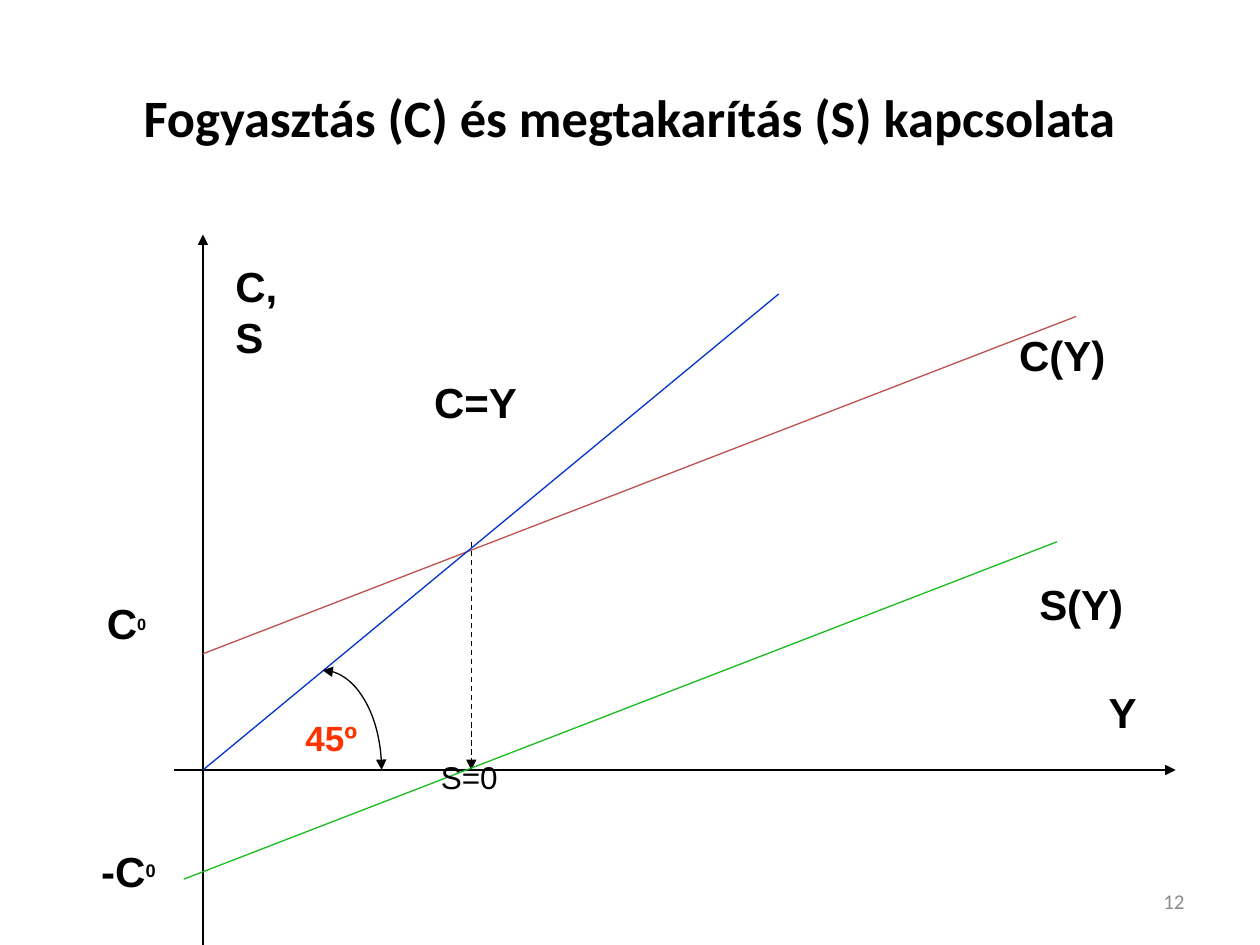
import math
from dataclasses import dataclass
from typing import Any

from lxml import etree
from pptx import Presentation
from pptx.dml.color import RGBColor
from pptx.enum import dml, shapes, text
from pptx.oxml import ns
from pptx.util import Pt


@dataclass(frozen=True)
class Theme:
    ink: str = "000000"
    muted: str = "8C8C8C"
    consumption: str = "C0504D"
    identity: str = "0033CC"
    saving: str = "15BD1D"
    angle: str = "FF3300"
    heading_font: str = "Calibri"
    label_font: str = "Arial"
    title: float = 30
    label: float = 24
    angle_size: float = 20
    note: float = 18
    number: float = 12
    stroke: float = 0.75


@dataclass(frozen=True)
class Line:
    start: tuple[float, float]
    end: tuple[float, float]
    color: str
    arrow: bool = False
    dashed: bool = False


@dataclass(frozen=True)
class Label:
    words: str
    frame: tuple[float, float, float, float]
    size: float
    color: str
    font: str
    bold: bool = True
    align: Any = text.PP_ALIGN.LEFT
    anchor: Any = text.MSO_ANCHOR.TOP
    index: str = ""
    index_size: float = 0


THEME = Theme()
CENTER = text.PP_ALIGN.CENTER
ORIGIN_X, ORIGIN_Y = 116, 440
SAVING_ZERO_X = 269.3


def axis_label(words: str, frame: tuple[float, float, float, float], **options: Any) -> Label:
    values = {"size": THEME.label, "color": THEME.ink, "font": THEME.label_font} | options
    return Label(words, frame, **values)


LINES = [
    Line((ORIGIN_X, 540), (ORIGIN_X, 134), THEME.ink, arrow=True),
    Line((99.2, ORIGIN_Y), (671.8, ORIGIN_Y), THEME.ink, arrow=True),
    Line((ORIGIN_X, 373.6), (615, 180.8), THEME.consumption),
    Line((ORIGIN_X, ORIGIN_Y), (445, 168), THEME.identity),
    Line((SAVING_ZERO_X, 309.6), (SAVING_ZERO_X, ORIGIN_Y), THEME.ink, arrow=True, dashed=True),
    Line((105, 502.4), (604, 309.6), THEME.saving),
]

LABELS = [
    axis_label("C", (54, 337.7, 45.4, 36), index="0", index_size=16),
    axis_label("C(Y)", (575.3, 185, 67.7, 36)),
    axis_label("Y", (626.4, 388.8, 45.4, 36)),
    axis_label("C, S", (127.4, 145.4, 45.4, 65.5)),
    axis_label("C=Y", (161.3, 211.7, 221, 36.7), align=CENTER),
    axis_label("-C", (42.5, 479.5, 61.9, 36), align=CENTER, index="0", index_size=18),
    axis_label("S(Y)", (586.8, 326.9, 67.7, 36)),
    axis_label("45º", (155.5, 406.1, 67.7, 31), align=CENTER,
               size=THEME.angle_size, color=THEME.angle),
    axis_label("S=0", (244.8, 429.8, 59, 28.8), size=THEME.note, bold=False),
    Label("12", (516.2, 500.4, 167.8, 28.8), THEME.number, THEME.muted, THEME.heading_font,
          bold=False, align=text.PP_ALIGN.RIGHT, anchor=text.MSO_ANCHOR.MIDDLE),
]


def apply(target: Any, values: dict[str, Any]) -> None:
    for name, value in values.items():
        setattr(target, name, value)


def place(box: Any, frame: tuple[float, float, float, float]) -> None:
    apply(box, dict(zip(("left", "top", "width", "height"), map(Pt, frame))))


def format_span(span: Any, label: Label, size: float) -> None:
    apply(span.font, {"name": label.font, "size": Pt(size), "bold": label.bold})
    span.font.color.rgb = RGBColor.from_string(label.color)


def write(box: Any, label: Label) -> None:
    apply(box.text_frame, {"word_wrap": True, "vertical_anchor": label.anchor,
                           "auto_size": text.MSO_AUTO_SIZE.NONE})
    para = box.text_frame.paragraphs[0]
    apply(para, {"alignment": label.align, "space_before": Pt(0)})
    span = para.add_run()
    span.text = label.words
    format_span(span, label, label.size)
    if label.index:
        index = para.add_run()
        index.text = label.index
        format_span(index, label, label.index_size)
        index._r.get_or_add_rPr().set("baseline", "30000")


def add_label(page: Any, label: Label) -> None:
    write(page.shapes.add_textbox(*map(Pt, label.frame)), label)


def style_line(shape: Any, color: str, dashed: bool, ends: tuple[str, ...]) -> None:
    shape.line.width = Pt(THEME.stroke)
    shape.line.color.rgb = RGBColor.from_string(color)
    if dashed:
        shape.line.dash_style = dml.MSO_LINE.DASH
    for end in ends:
        etree.SubElement(shape.line._get_or_add_ln(), ns.qn(f"a:{end}"), type="triangle")


def add_line(page: Any, line: Line) -> None:
    connector = page.shapes.add_connector(
        shapes.MSO_CONNECTOR.STRAIGHT, *map(Pt, line.start + line.end))
    style_line(connector, line.color, line.dashed, ("tailEnd",) if line.arrow else ())
    etree.SubElement(connector._element.spPr, ns.qn("a:effectLst"))


def add_angle(page: Any, left: float, width: float, height: float, steps: int = 24) -> None:
    turns = [math.pi / 2 * step / steps for step in range(steps + 1)]
    points = [(Pt(left + width * math.sin(turn)), Pt(ORIGIN_Y - height * math.cos(turn)))
              for turn in turns]
    builder = page.shapes.build_freeform(*points[0])
    builder.add_line_segments(points[1:], close=False)
    arc = builder.convert_to_shape()
    arc.shadow.inherit = False
    arc.fill.background()
    style_line(arc, THEME.ink, False, ("headEnd", "tailEnd"))


def main() -> None:
    deck = Presentation()
    apply(deck, {"slide_width": Pt(720), "slide_height": Pt(540)})
    page = deck.slides.add_slide(deck.slide_layouts[5])
    title = Label("Fogyasztás (C) és megtakarítás (S) kapcsolata", (36, 21.6, 648, 90),
                  THEME.title, THEME.ink, THEME.heading_font,
                  align=CENTER, anchor=text.MSO_ANCHOR.MIDDLE)
    place(page.shapes.title, title.frame)
    write(page.shapes.title, title)
    for line in LINES:
        add_line(page, line)
    add_angle(page, 184.3, 33.8, 57)
    for label in LABELS:
        add_label(page, label)
    deck.save("out.pptx")


if __name__ == "__main__":
    main()
